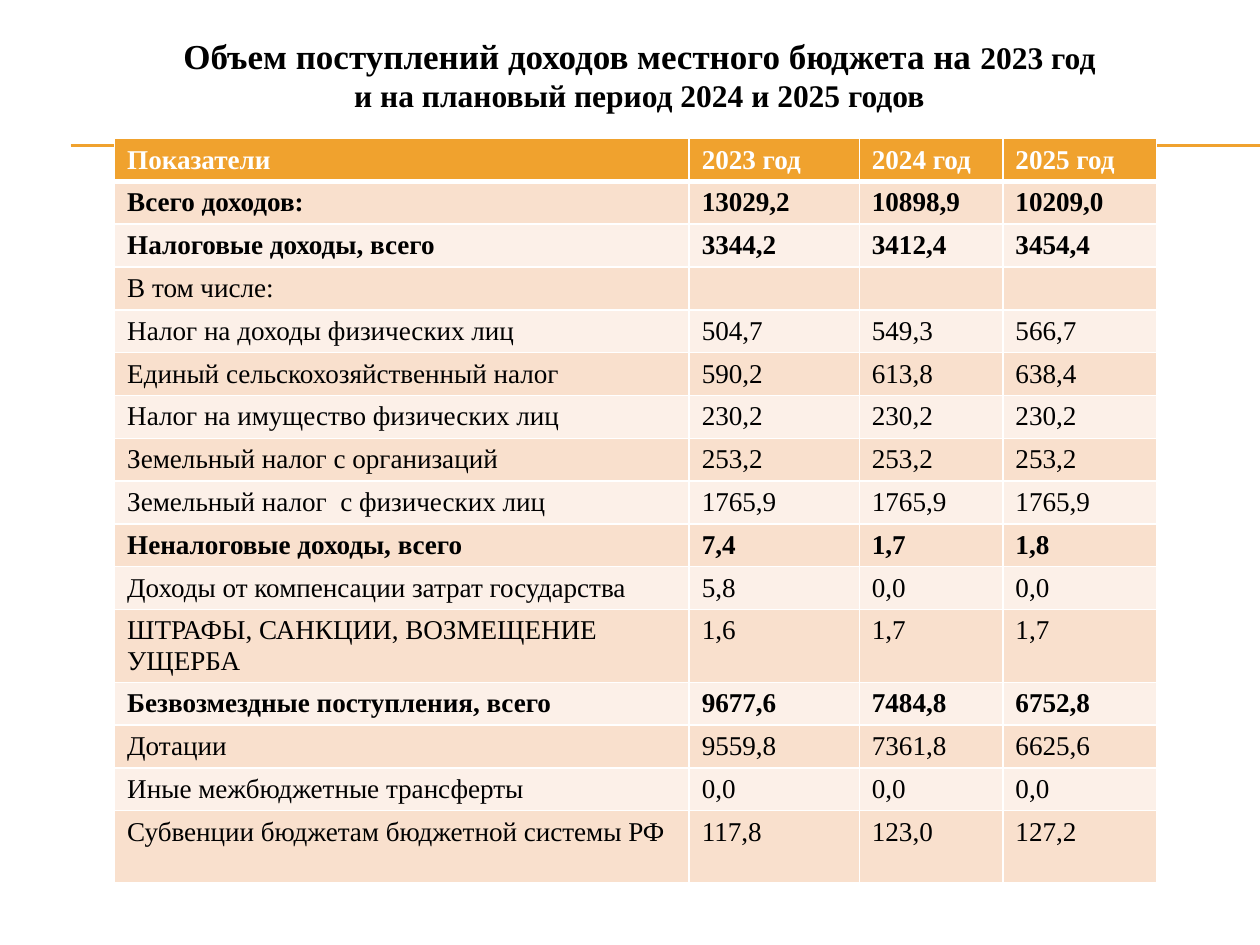
from lxml.etree import SubElement
from pptx import Presentation
from pptx.dml.color import RGBColor
from pptx.enum.shapes import MSO_CONNECTOR
from pptx.enum.text import MSO_ANCHOR, PP_ALIGN
from pptx.oxml.ns import qn
from pptx.util import Inches, Pt

COLORS = {
    "accent": "F0A22E",
    "odd_row": "F9E0CD",
    "even_row": "FCF0E8",
    "white": "FFFFFF",
    "black": "000000",
}
FONT = "Times New Roman"
TABLE_SIZE = 15.5

TITLE = [
    [("Объем поступлений доходов местного бюджета на ", 20), ("2023 год", 18)],
    [("и на плановый период 2024 и 2025 годов", 18)],
]
ROWS = [
    ("Показатели", "2023 год", "2024 год", "2025 год"),
    ("Всего доходов:", "13029,2", "10898,9", "10209,0"),
    ("Налоговые доходы, всего", "3344,2", "3412,4", "3454,4"),
    ("В том числе:", "", "", ""),
    ("Налог на доходы физических лиц", "504,7", "549,3", "566,7"),
    ("Единый сельскохозяйственный налог", "590,2", "613,8", "638,4"),
    ("Налог на имущество физических лиц", "230,2", "230,2", "230,2"),
    ("Земельный налог с организаций", "253,2", "253,2", "253,2"),
    ("Земельный налог  с физических лиц", "1765,9", "1765,9", "1765,9"),
    ("Неналоговые доходы, всего", "7,4", "1,7", "1,8"),
    ("Доходы от компенсации затрат государства", "5,8", "0,0", "0,0"),
    ("ШТРАФЫ, САНКЦИИ, ВОЗМЕЩЕНИЕ УЩЕРБА", "1,6", "1,7", "1,7"),
    ("Безвозмездные поступления, всего", "9677,6", "7484,8", "6752,8"),
    ("Дотации", "9559,8", "7361,8", "6625,6"),
    ("Иные межбюджетные трансферты", "0,0", "0,0", "0,0"),
    ("Субвенции бюджетам бюджетной системы РФ", "117,8", "123,0", "127,2"),
]
BOLD_ROWS = {0, 1, 2, 9, 12}
TALL_ROWS = {11, 15}
ROW_HEIGHT, TALL_ROW_HEIGHT = 0.34, 0.57
COLUMN_WIDTHS = [4.56, 1.35, 1.14, 1.22]
RULE_HEIGHTS = [1.15, 1.16]


def rgb(name):
    return RGBColor.from_string(COLORS[name])


def set_font(font, size, color, bold):
    font.name = FONT
    font.size = Pt(size)
    font.bold = bold
    font.color.rgb = rgb(color)


def add_rule(slide, top):
    rule = slide.shapes.add_connector(
        MSO_CONNECTOR.STRAIGHT, Inches(0.56), Inches(top), Inches(10), Inches(top))
    rule.line.color.rgb = rgb("accent")
    rule.line.width = Pt(0.75)
    SubElement(rule._element.spPr, qn("a:effectLst"))


def add_borders(cell, widths):
    properties = cell._tc.get_or_add_tcPr()
    for side, width in widths.items():
        line = SubElement(properties, qn(f"a:ln{side}"), w=str(Pt(width)))
        fill = SubElement(line, qn("a:solidFill"))
        SubElement(fill, qn("a:srgbClr"), val=COLORS["white"])


def fill_cell(cell, text, row):
    header = row == 0
    add_borders(cell, {"L": 1, "R": 1, "T": 3 if row == 1 else 1, "B": 3 if header else 1})
    cell.fill.solid()
    cell.fill.fore_color.rgb = rgb("accent" if header else "odd_row" if row % 2 else "even_row")
    cell.text = text
    paragraph = cell.text_frame.paragraphs[0]
    set_font(paragraph.font, TABLE_SIZE, "white" if header else "black", row in BOLD_ROWS)
    if not text:
        SubElement(paragraph._p, qn("a:endParaRPr"), sz=str(int(TABLE_SIZE * 100)))


def add_budget_table(slide):
    heights = [TALL_ROW_HEIGHT if row in TALL_ROWS else ROW_HEIGHT for row in range(len(ROWS))]
    table = slide.shapes.add_table(
        len(ROWS), len(COLUMN_WIDTHS), Inches(0.91), Inches(1.1),
        Inches(sum(COLUMN_WIDTHS)), Inches(sum(heights))).table
    for column, width in zip(table.columns, COLUMN_WIDTHS):
        column.width = Inches(width)
    for row, (values, height) in enumerate(zip(ROWS, heights)):
        table.rows[row].height = Inches(height)
        for column, text in enumerate(values):
            fill_cell(table.cell(row, column), text, row)


def add_title(slide):
    frame = slide.shapes.add_textbox(
        Inches(0.9), Inches(0.22), Inches(8.35), Inches(0.74)).text_frame
    frame.word_wrap = True
    frame.vertical_anchor = MSO_ANCHOR.MIDDLE
    for index, runs in enumerate(TITLE):
        paragraph = frame.add_paragraph() if index else frame.paragraphs[0]
        paragraph.alignment = PP_ALIGN.CENTER
        set_font(paragraph.font, 18, "black", True)
        for text, size in runs:
            run = paragraph.add_run()
            run.text = text
            run.font.size = Pt(size)


def main():
    presentation = Presentation()
    presentation.slide_width, presentation.slide_height = Inches(10), Inches(7.5)
    slide = presentation.slides.add_slide(presentation.slide_layouts[6])
    for top in RULE_HEIGHTS:
        add_rule(slide, top)
    add_budget_table(slide)
    add_title(slide)
    presentation.save("out.pptx")


if __name__ == "__main__":
    main()
